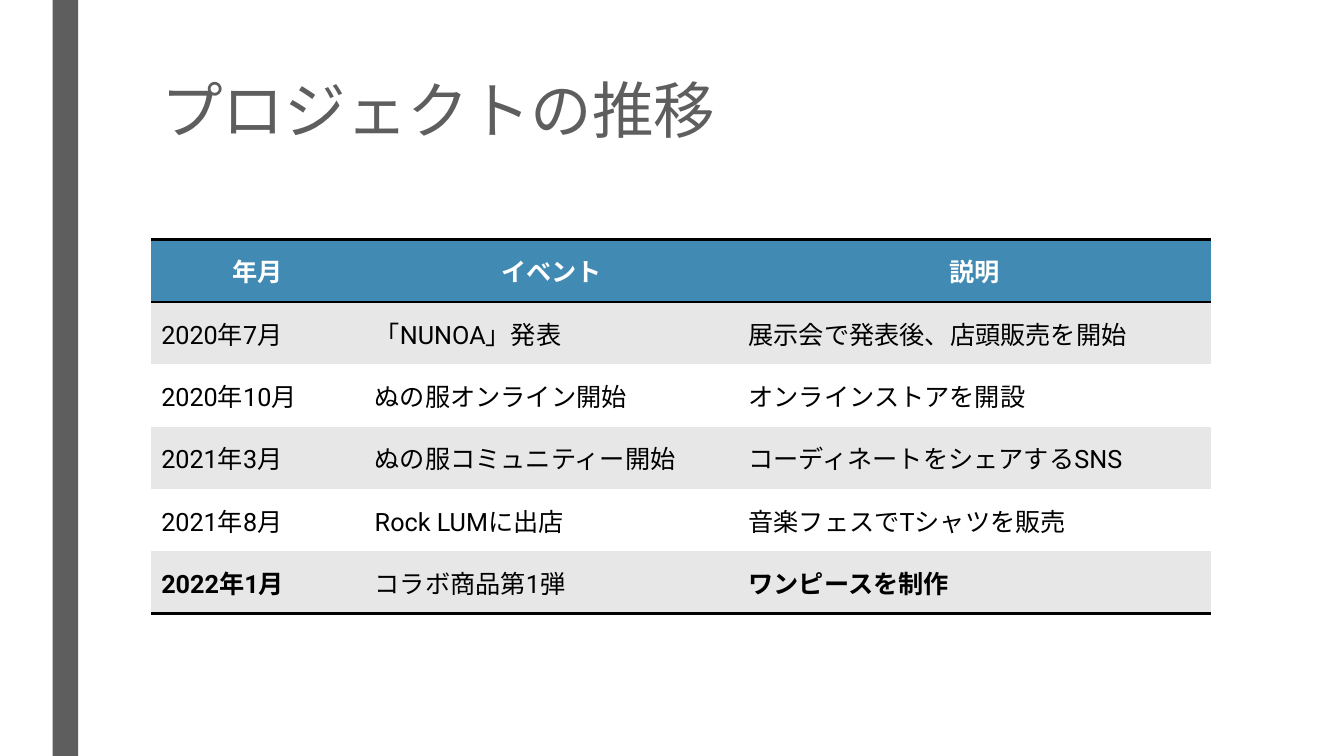
from lxml import etree
from pptx import Presentation
from pptx.dml.color import RGBColor
from pptx.enum.lang import MSO_LANGUAGE_ID
from pptx.enum.shapes import MSO_SHAPE
from pptx.enum.text import MSO_ANCHOR, MSO_AUTO_SIZE, PP_ALIGN
from pptx.oxml.ns import qn
from pptx.util import Cm, Pt

TITLE = "プロジェクトの推移"
HEADER = ("年月", "イベント", "説明")
MILESTONES = [
    ("2020年7月", "「NUNOA」発表", "展示会で発表後、店頭販売を開始"),
    ("2020年10月", "ぬの服オンライン開始", "オンラインストアを開設"),
    ("2021年3月", "ぬの服コミュニティー開始", "コーディネートをシェアするSNS"),
    ("2021年8月", "Rock LUMに出店", "音楽フェスでTシャツを販売"),
    ("2022年1月", "コラボ商品第1弾", "ワンピースを制作"),
]
BOLD_IN_LAST_ROW = (0, 2)

COLORS = {
    "gray": "5E5E5E",
    "header": "418AB3",
    "band": "E7E7E7",
    "white": "FFFFFF",
    "black": "000000",
}
FONT = "Roboto"
PLAIN_TABLE_STYLE = "{2D5ABB26-0587-4C30-8999-92F81FD0307C}"
LEFT, CENTER = PP_ALIGN.LEFT, PP_ALIGN.CENTER
TOP, MIDDLE = MSO_ANCHOR.TOP, MSO_ANCHOR.MIDDLE
JAPANESE = MSO_LANGUAGE_ID.JAPANESE

SLIDE_WIDTH, SLIDE_HEIGHT = Cm(33.87), Cm(19.05)
CONTENT_LEFT = Cm(3.81)
TABLE_TOP = Cm(6.04)
COLUMN_WIDTHS = (Cm(5.38), Cm(9.42), Cm(11.9))
ROW_HEIGHT = Cm(1.57)


def rgb(name):
    return RGBColor.from_string(COLORS[name])


def write(frame, text, size=18, color="black", bold=False, align=LEFT, spacing=1.0):
    paragraph = frame.paragraphs[0]
    paragraph.alignment = align
    paragraph.line_spacing = spacing
    run = paragraph.add_run()
    run.text = text
    font = run.font
    font.name, font.size, font.bold = FONT, Pt(size), bold
    font.color.rgb = rgb(color)
    font.language_id = JAPANESE


def add_rule(cell, side, width=2):
    """Draw a black border on one side of a cell; call before filling the cell."""
    properties = cell._tc.get_or_add_tcPr()
    line = etree.SubElement(properties, qn(f"a:ln{side}"), w=str(Pt(width)))
    fill = etree.SubElement(line, qn("a:solidFill"))
    etree.SubElement(fill, qn("a:srgbClr"), val=COLORS["black"])


def add_side_bar(slide):
    bar = slide.shapes.add_shape(
        MSO_SHAPE.RECTANGLE, Cm(1.33), 0, Cm(0.64), SLIDE_HEIGHT)
    bar.shadow.inherit = False
    bar.fill.solid()
    bar.fill.fore_color.rgb = rgb("gray")
    bar.line.fill.background()


def place_title(slide):
    title = slide.shapes.title
    title.left, title.top = CONTENT_LEFT, Cm(1.91)
    title.width, title.height = Cm(26.67), Cm(4.11)
    frame = title.text_frame
    frame.vertical_anchor = TOP
    frame.auto_size = MSO_AUTO_SIZE.NONE
    frame.word_wrap = True
    write(frame, TITLE, size=44, color="gray", spacing=0.89)


def add_history_table(slide):
    rows = [HEADER, *MILESTONES]
    last = len(rows) - 1
    table_frame = slide.shapes.add_table(
        len(rows), len(HEADER), CONTENT_LEFT, TABLE_TOP,
        sum(COLUMN_WIDTHS), ROW_HEIGHT * len(rows))
    table = table_frame.table
    table.horz_banding = False
    table._tbl.tblPr.find(qn("a:tableStyleId")).text = PLAIN_TABLE_STYLE
    for column, width in zip(table.columns, COLUMN_WIDTHS):
        column.width = width

    for r, texts in enumerate(rows):
        table.rows[r].height = ROW_HEIGHT
        is_header = r == 0
        background = "header" if is_header else "band" if r % 2 else "white"
        for c, text in enumerate(texts):
            cell = table.cell(r, c)
            cell.vertical_anchor = MIDDLE
            if is_header:
                add_rule(cell, "T")
            if r in (0, last):
                add_rule(cell, "B")
            cell.fill.solid()
            cell.fill.fore_color.rgb = rgb(background)
            write(cell.text_frame, text,
                  color="white" if is_header else "black",
                  bold=is_header or (r == last and c in BOLD_IN_LAST_ROW),
                  align=CENTER if is_header else LEFT)


def main():
    presentation = Presentation()
    presentation.slide_width = SLIDE_WIDTH
    presentation.slide_height = SLIDE_HEIGHT
    slide = presentation.slides.add_slide(presentation.slide_layouts[5])
    add_side_bar(slide)
    place_title(slide)
    add_history_table(slide)
    presentation.save("out.pptx")


if __name__ == "__main__":
    main()
